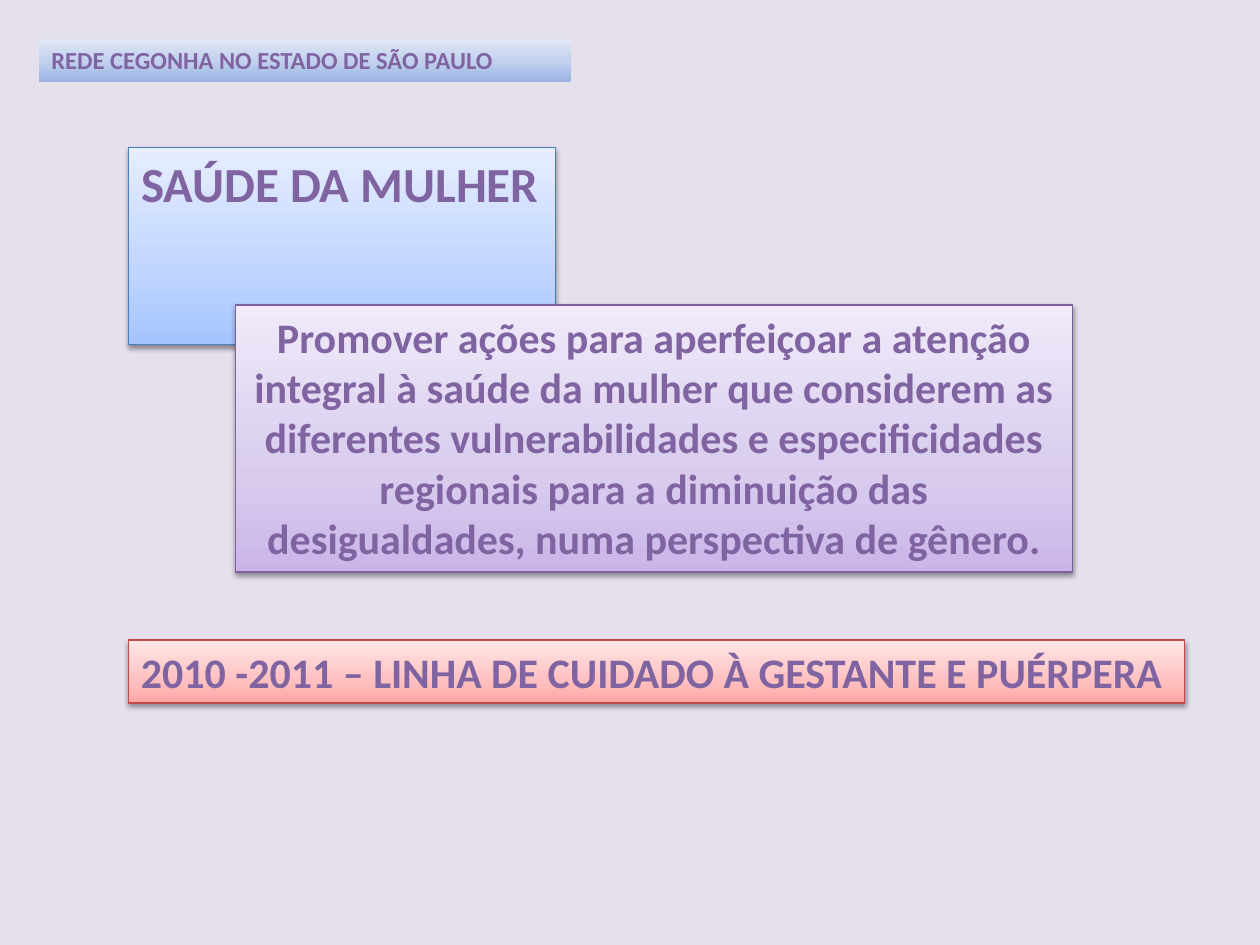
import pptx
import pptx.dml.color
import pptx.enum.text
import pptx.oxml
import pptx.oxml.ns
import pptx.util
from lxml import etree

RGBColor = pptx.dml.color.RGBColor
Inches = pptx.util.Inches
Pt = pptx.util.Pt
Align = pptx.enum.text.PP_ALIGN

BACKGROUND = RGBColor(0xE5, 0xE0, 0xEC)
TEXT = RGBColor(0x80, 0x64, 0xA2)
BLACK = RGBColor(0, 0, 0)
BLUE_LINE = RGBColor(0x4B, 0x7E, 0xBC)
RED_LINE = RGBColor(0xBF, 0x4C, 0x48)
PURPLE_LINE = RGBColor(0x7D, 0x60, 0xA0)

# Gradient stops as (percent, colour), from the bottom edge up
BLUE = [(0, RGBColor(0xA4, 0xC4, 0xFF)), (35, RGBColor(0xBF, 0xD4, 0xFF)),
        (100, RGBColor(0xE6, 0xEE, 0xFF))]
RED = [(0, RGBColor(0xFF, 0xA6, 0xA5)), (35, RGBColor(0xFF, 0xC0, 0xBF)),
       (100, RGBColor(0xFF, 0xE7, 0xE7))]
PURPLE = [(0, RGBColor(0xC9, 0xB5, 0xE8)), (35, RGBColor(0xD8, 0xCB, 0xEE)),
          (100, RGBColor(0xF0, 0xEA, 0xF9))]
HEADER_BLUE = [(0, RGBColor(0x9A, 0xB5, 0xE4)), (50, RGBColor(0xC2, 0xD1, 0xED)),
               (100, RGBColor(0xE1, 0xE8, 0xF5))]


def add_child(parent, tag, **attributes):
    child = etree.SubElement(parent, pptx.oxml.ns.qn(tag))
    for name, value in attributes.items():
        child.set(name, str(value))
    return child


def fill_gradient(box, stops):
    box.fill.gradient()
    box.fill.gradient_angle = 90
    stop_list = box._element.spPr.find(".//" + pptx.oxml.ns.qn("a:gsLst"))
    for old_stop in list(stop_list):
        stop_list.remove(old_stop)
    for percent, color in stops:
        stop = add_child(stop_list, "a:gs", pos=percent * 1000)
        add_child(stop, "a:srgbClr", val=color)


def add_shadow(box):
    effects = box._element.spPr.find(pptx.oxml.ns.qn("a:effectLst"))
    shadow = add_child(effects, "a:outerShdw", blurRad=Pt(3.1), dist=Pt(1.6),
                       dir=90 * 60000, rotWithShape=0)
    color = add_child(shadow, "a:srgbClr", val=BLACK)
    add_child(color, "a:alpha", val=38000)


def write_text(box, text, size, align=Align.LEFT, wrap=True):
    frame = box.text_frame
    frame.word_wrap = wrap
    frame.auto_size = pptx.enum.text.MSO_AUTO_SIZE.SHAPE_TO_FIT_TEXT
    frame.vertical_anchor = pptx.enum.text.MSO_ANCHOR.TOP
    para = frame.paragraphs[0]
    para.alignment = align
    span = para.add_run()
    span.text = text
    span.font.name = "Calibri"
    span.font.size = Pt(size)
    span.font.bold = True
    span.font.color.rgb = TEXT


def style_panel(box, stops, line=None):
    """Gradient panel; an outlined one also casts a shadow."""
    fill_gradient(box, stops)
    box.shadow.inherit = False
    if line is not None:
        box.line.color.rgb = line
        box.line.width = Pt(0.75)
        add_shadow(box)


def place_title(slide, place, text, stops, line):
    title = slide.shapes.title
    title.left, title.top, title.width, title.height = map(Inches, place)
    style_panel(title, stops, line)
    write_text(title, text, 28, wrap=False)


def add_panel(slide, place, text, stops, line=None, **text_format):
    box = slide.shapes.add_textbox(*map(Inches, place))
    style_panel(box, stops, line)
    write_text(box, text, **text_format)


def main():
    deck = pptx.Presentation()
    deck.slide_width, deck.slide_height = Inches(10), Inches(7.5)
    page = deck.slides.add_slide(deck.slide_layouts.get_by_name("Title Only"))
    page.background.fill.solid()
    page.background.fill.fore_color.rgb = BACKGROUND

    # Title
    place_title(page, (1.02, 1.17, 3.39, 0.57), "SAÚDE DA MULHER", BLUE, BLUE_LINE)

    # Care line for 2010-2011
    add_panel(page, (1.02, 5.08, 8.38, 0.5),
              "2010 -2011 – LINHA DE CUIDADO À GESTANTE E PUÉRPERA",
              RED, RED_LINE, size=24, wrap=False)

    # Goal statement
    add_panel(page, (1.87, 2.42, 6.64, 2.12),
              "Promover ações para aperfeiçoar a atenção integral à saúde da mulher "
              "que considerem as diferentes vulnerabilidades e especificidades "
              "regionais para a diminuição das desigualdades, numa perspectiva "
              "de gênero.",
              PURPLE, PURPLE_LINE, size=24, align=Align.CENTER)

    # Programme header
    add_panel(page, (0.31, 0.31, 4.22, 0.34), "REDE CEGONHA NO ESTADO DE SÃO PAULO",
              HEADER_BLUE, size=14)

    deck.save("out.pptx")


if __name__ == "__main__":
    main()
